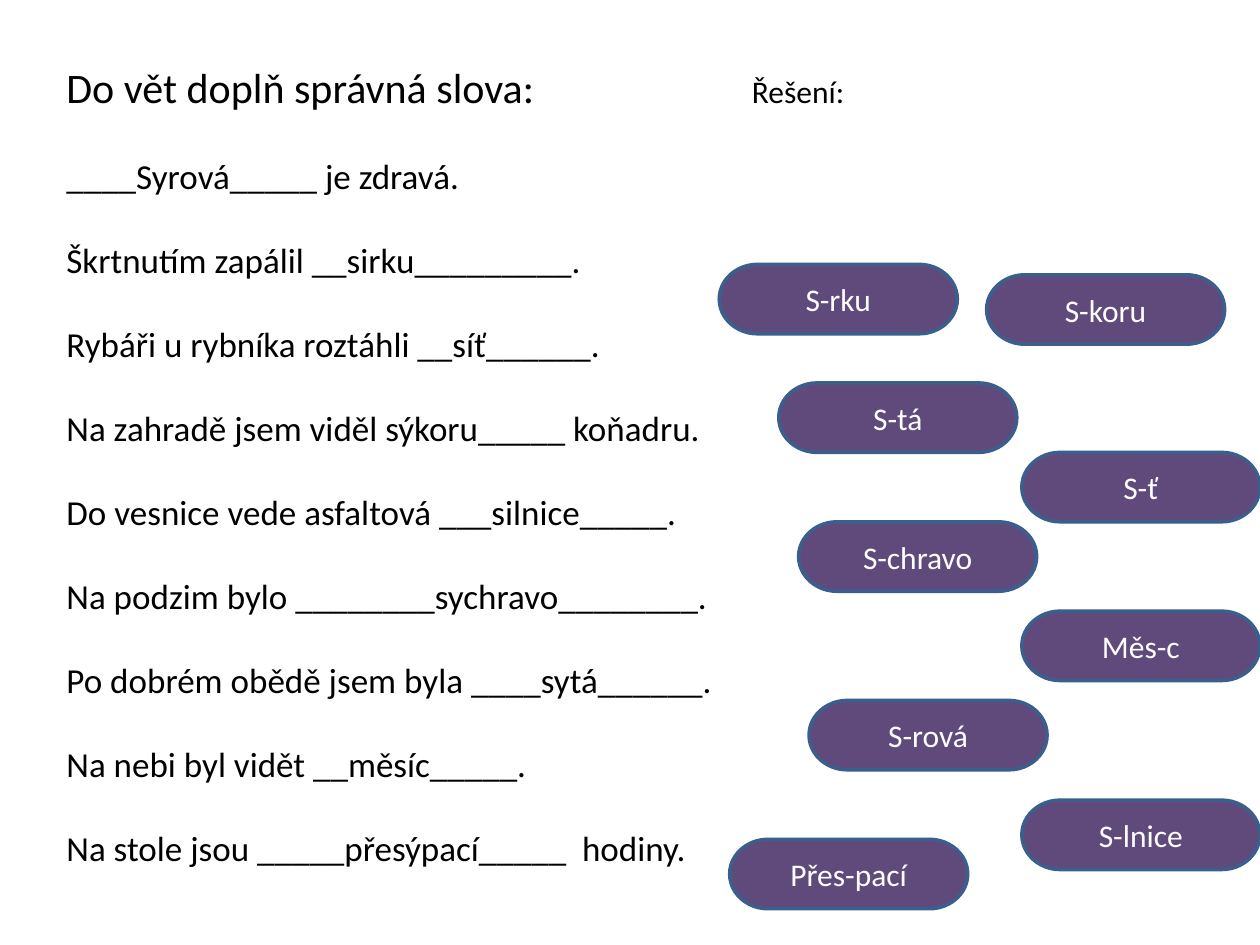
from pptx import Presentation
from pptx import util as u
from pptx.dml.color import RGBColor
from pptx.enum import shapes, text

BLACK = RGBColor(0x00, 0x00, 0x00)
WHITE = RGBColor(0xFF, 0xFF, 0xFF)
PURPLE = RGBColor(0x60, 0x4A, 0x7B)
BLUE = RGBColor(0x3A, 0x5F, 0x8C)
FONT = "Calibri"

HEADING = "Do vět doplň správná slova:"
SENTENCES = [
    "____Syrová_____ je zdravá.",
    "Škrtnutím zapálil __sirku_________.",
    "Rybáři u rybníka roztáhli __síť______.",
    "Na zahradě jsem viděl sýkoru_____ koňadru.",
    "Do vesnice vede asfaltová ___silnice_____.",
    "Na podzim bylo ________sychravo________.",
    "Po dobrém obědě jsem byla ____sytá______.",
    "Na nebi byl vidět __měsíc_____.",
    "Na stole jsou _____přesýpací_____  hodiny.",
]

# Word, left and top in centimetres
WORD_CARDS = [
    ("S-rku", 14.5, 5.33),
    ("S-ť", 20.6, 9.12),
    ("S-chravo", 16.1, 10.52),
    ("Měs-c", 20.6, 12.32),
    ("S-rová", 16.31, 14.12),
    ("S-lnice", 20.6, 16.13),
    ("S-koru", 19.89, 5.54),
    ("S-tá", 15.7, 7.72),
    ("Přes-pací", 14.71, 16.92),
]
CARD_WIDTH, CARD_HEIGHT = u.Cm(4.8), u.Cm(1.4)


def write(paragraph, words, size, color):
    paragraph.text = words
    paragraph.font.name = FONT
    paragraph.font.size = u.Pt(size)
    paragraph.font.color.rgb = color


def add_text_frame(left, top, width, height):
    """Add a wrapping text box and return its text frame."""
    box = slide.shapes.add_textbox(u.Cm(left), u.Cm(top), u.Cm(width), u.Cm(height))
    box.text_frame.word_wrap = True
    box.text_frame.auto_size = text.MSO_AUTO_SIZE.SHAPE_TO_FIT_TEXT
    return box.text_frame


presentation = Presentation()
presentation.slide_width = u.Cm(25.4)
presentation.slide_height = u.Cm(19.05)
slide = presentation.slides.add_slide(presentation.slide_layouts[6])

exercise = add_text_frame(1.09, 1.12, 16.41, 16.66)
write(exercise.paragraphs[0], HEADING, 24, BLACK)
for sentence in SENTENCES:
    paragraph = exercise.add_paragraph()
    write(paragraph, sentence, 20, BLACK)
    paragraph.space_before = u.Pt(24)

for word, left, top in WORD_CARDS:
    card = slide.shapes.add_shape(
        shapes.MSO_SHAPE.FLOWCHART_TERMINATOR, u.Cm(left), u.Cm(top), CARD_WIDTH, CARD_HEIGHT
    )
    card.shadow.inherit = False
    card.fill.solid()
    card.fill.fore_color.rgb = PURPLE
    card.line.color.rgb = BLUE
    card.line.width = u.Pt(2)
    card.text_frame.vertical_anchor = text.MSO_ANCHOR.MIDDLE
    paragraph = card.text_frame.paragraphs[0]
    write(paragraph, word, 18, WHITE)
    paragraph.alignment = text.PP_ALIGN.CENTER

solution = add_text_frame(14.91, 1.32, 9.4, 1.02)
write(solution.paragraphs[0], "Řešení:", 18, BLACK)

presentation.save("out.pptx")
